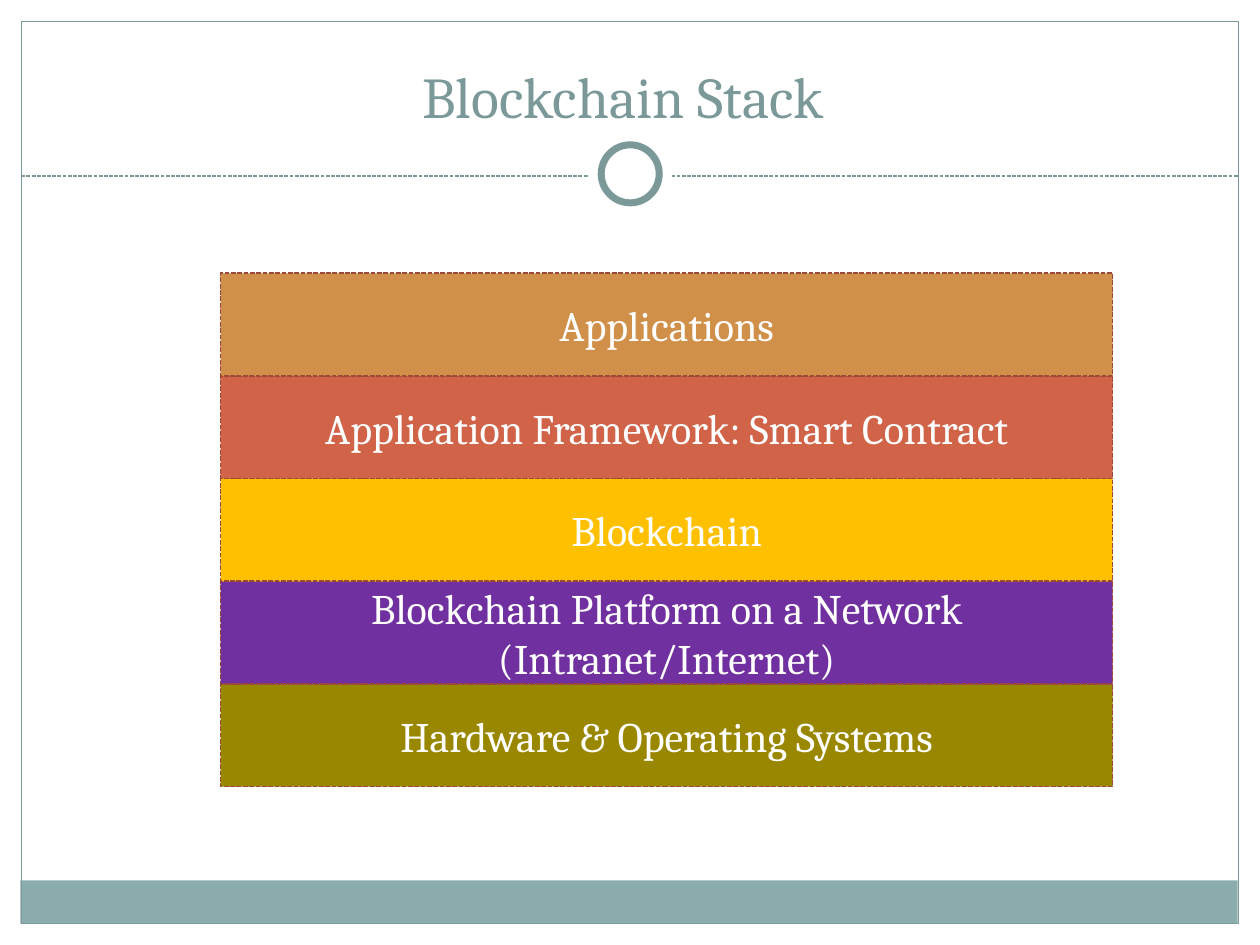
import pptx
import pptx.dml.color
import pptx.enum.dml
import pptx.enum.shapes
import pptx.enum.text
import pptx.oxml.ns
import pptx.util
from lxml import etree
from pptx.util import Cm

COLORS = {
    "white": "FFFFFF",
    "teal": "7C999A",
    "band": "8CADAE",
    "layer_edge": "9B4936",
    "applications": "D19049",
    "framework": "D16349",
    "blockchain": "FFC000",
    "platform": "7030A0",
    "hardware": "998700",
}
FONT = "Cambria"
SHAPE = pptx.enum.shapes.MSO_SHAPE
ANCHOR = pptx.enum.text.MSO_ANCHOR
DASH = pptx.enum.dml.MSO_LINE.SQUARE_DOT  # written as sysDash

# Stack from top to bottom
LAYERS = [
    ("Applications", "applications"),
    ("Application Framework: Smart Contract", "framework"),
    ("Blockchain", "blockchain"),
    ("Blockchain Platform on a Network (Intranet/Internet)", "platform"),
    ("Hardware & Operating Systems", "hardware"),
]
STACK_LEFT, STACK_TOP = 4.45, 5.51
LAYER_WIDTH, LAYER_HEIGHT = 17.98, 2.07


def rgb(name):
    return pptx.dml.color.RGBColor.from_string(COLORS[name])


def style_line(line, color, width, dash=None):
    line.color.rgb = rgb(color)
    line.width = pptx.util.Pt(width)
    if dash is not None:
        line.dash_style = dash


def add_block(shapes, kind, box, fill=None, edge=None):
    """Add a preset shape; edge is (color, width, optional dash)."""
    block = shapes.add_shape(kind, *(Cm(length) for length in box))
    block.shadow.inherit = False
    if fill:
        block.fill.solid()
        block.fill.fore_color.rgb = rgb(fill)
    else:
        block.fill.background()
    if edge:
        style_line(block.line, *edge)
    else:
        block.line.fill.background()
    return block


def write(shape, text, size, color, anchor):
    frame = shape.text_frame
    frame.word_wrap = True
    frame.vertical_anchor = anchor
    frame.text = text
    paragraph = frame.paragraphs[0]
    paragraph.alignment = pptx.enum.text.PP_ALIGN.CENTER
    font = paragraph.runs[0].font
    font.name = FONT
    font.size = pptx.util.Pt(size)
    font.color.rgb = rgb(color)


def add_divider(shapes, left, right, y):
    divider = shapes.add_connector(
        pptx.enum.shapes.MSO_CONNECTOR.STRAIGHT, Cm(left), Cm(y), Cm(right), Cm(y))
    style_line(divider.line, "teal", 0.75, DASH)
    etree.SubElement(divider._element.spPr, pptx.oxml.ns.qn("a:effectLst"))


def add_frame(shapes):
    add_block(shapes, SHAPE.RECTANGLE, (0.41, 17.75, 24.54, 0.87), "band")
    add_block(shapes, SHAPE.RECTANGLE, (0.43, 0.43, 24.54, 18.19), edge=("teal", 0.75))
    add_divider(shapes, 0.43, 24.97, 3.55)
    # The white disc leaves a gap in the divider around the ring
    add_block(shapes, SHAPE.OVAL, (11.85, 2.67, 1.7, 1.7), "white")
    add_block(shapes, SHAPE.OVAL, (12.12, 2.92, 1.17, 1.17), "white", ("teal", 4))


def add_title(shapes):
    title = shapes.add_textbox(Cm(0.84), Cm(0.64), Cm(23.7), Cm(2.11))
    write(title, "Blockchain Stack ", 33, "teal", ANCHOR.BOTTOM)


def add_stack(shapes):
    stack = shapes.add_group_shape()
    # Drawn from the bottom layer upwards
    for row, (label, fill) in reversed(list(enumerate(LAYERS))):
        box = (STACK_LEFT, STACK_TOP + row * LAYER_HEIGHT, LAYER_WIDTH, LAYER_HEIGHT)
        layer = add_block(stack.shapes, SHAPE.RECTANGLE, box, fill,
                          ("layer_edge", 0.9, DASH))
        write(layer, label, 24, "white", ANCHOR.MIDDLE)


def main():
    deck = pptx.Presentation()
    deck.slide_width, deck.slide_height = Cm(25.4), Cm(19.05)
    slide = deck.slides.add_slide(deck.slide_layouts[6])
    add_frame(slide.shapes)
    add_title(slide.shapes)
    add_stack(slide.shapes)
    deck.save("out.pptx")


if __name__ == "__main__":
    main()
